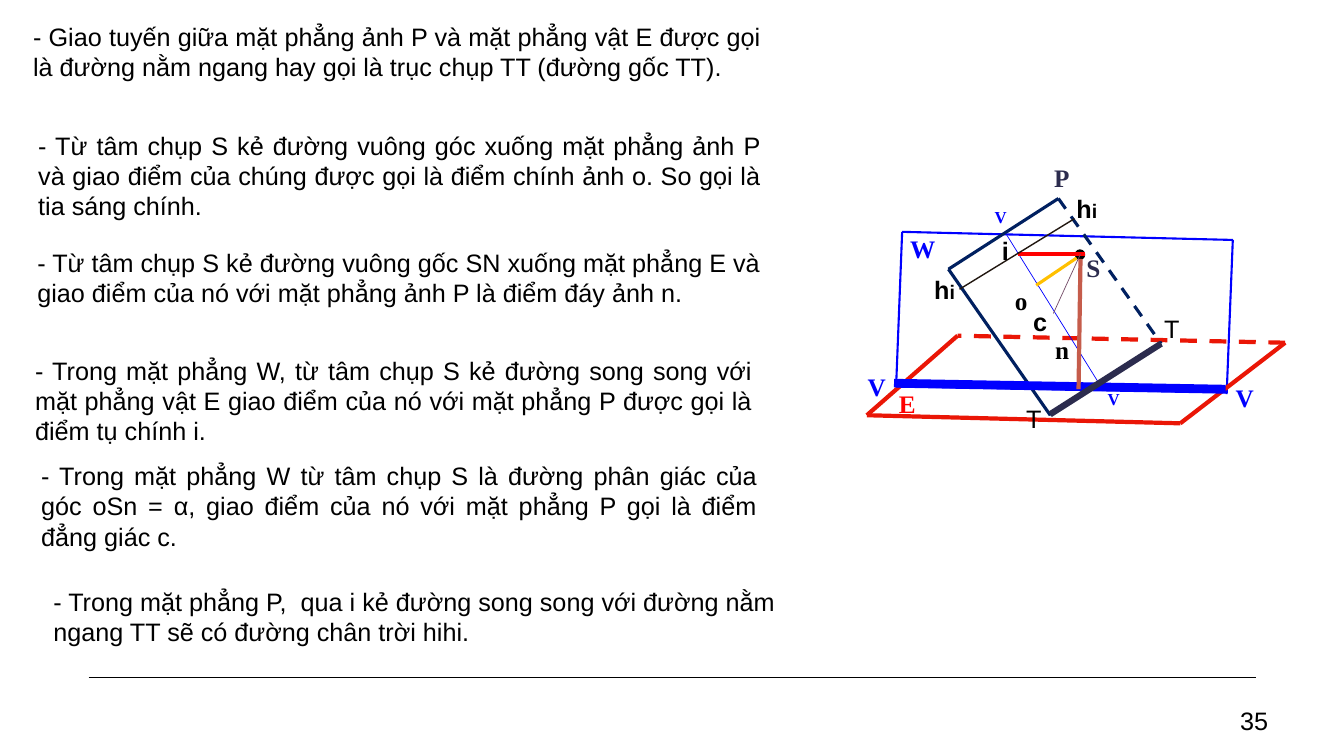
from lxml.etree import SubElement
from pptx import Presentation
from pptx.dml.color import RGBColor
from pptx.enum.dml import MSO_LINE_DASH_STYLE as DASH
from pptx.enum.shapes import MSO_CONNECTOR as CONN, MSO_SHAPE as SHAPE
from pptx.enum.text import MSO_ANCHOR as ANCHOR, PP_ALIGN as ALIGN
from pptx.oxml.ns import qn
from pptx.util import Pt

COLORS = {
    "black": "000000", "blue": "0000FF", "red": "FF0000", "ground": "EA1606",
    "navy": "002060", "slate": "2C2C4E", "gold": "FFC000", "brick": "C55C4B",
    "plum": "734B67", "brown": "211710",
}
SANS, SERIF = "Arial", "Times New Roman"

NOTES = [
    (0, 0, 534, 51, "- Giao tuyến giữa mặt phẳng ảnh P và mặt phẳng vật E được gọi là đường nằm ngang hay gọi là trục chụp TT (đường gốc TT)."),
    (3.6, 78, 530, 73, "- Từ tâm chụp S kẻ đường vuông góc xuống mặt phẳng ảnh P và giao điểm của chúng được gọi là điểm chính ảnh o. So gọi là tia sáng chính."),
    (3, 161.5, 530.6, 51, "- Từ tâm chụp S kẻ đường vuông gốc SN xuống mặt phẳng E và giao điểm của nó với mặt phẳng ảnh P là điểm đáy ảnh n."),
    (1.4, 238.5, 526.3, 73, "- Trong mặt phẳng W, từ tâm chụp S kẻ đường song song với mặt phẳng vật E giao điểm của nó với mặt phẳng P được gọi là điểm tụ chính i."),
    (5.7, 314, 525.6, 73, "- Trong mặt phẳng W từ tâm chụp S là đường phân giác của góc oSn = α, giao điểm của nó với mặt phẳng P gọi là điểm đẳng giác c."),
    (14.4, 404, 581.8, 51, "- Trong mặt phẳng P,  qua i kẻ đường song song với đường nằm ngang TT sẽ có đường chân trời hihi."),
]

PLANE_W = [(28.1, 163.8), (32.4, 53.6), (268.6, 59.4), (264.2, 169.5)]
PLANE_E = [(72, 127.8), (7.2, 184.6), (231.1, 190.4), (306, 132.8)]
PLANE_P = [(217.4, 133.5), (138.2, 184.6), (65.5, 80.3), (144, 29.8)]
RAYS = [
    ((28.1, 163.8), (264.2, 168.1), "blue", 2.25),
    ((106.6, 55), (174.2, 163.8), "blue", 0.5),
    ((26.6, 161.6), (263.5, 165.9), "blue", 6),
    ((138.2, 183.9), (217.4, 133.5), "slate", 4.5),
    ((157, 72.3), (128.2, 91.8), "gold", 2.25),
    ((159.8, 73), (158.4, 165.9), "brick", 3),
    ((115.2, 69.4), (162.7, 69.4), "red", 2.25),
    ((159.8, 69.4), (140.4, 111.9), "plum", 0.5),
    ((73.4, 94.6), (155.5, 44.2), "brown", 1),
]
LABELS = [
    ("W", 31, 51.4, 32.4, SERIF, "blue", 18, True),
    ("V", 91.4, 32, 23, SERIF, "blue", 12, True),
    ("V", 172.1, 162.3, 23, SERIF, "blue", 12, True),
    ("S", 157, 64.4, 24.5, SERIF, "slate", 18, True),
    ("E", 23, 161.6, 27, SERIF, "red", 18, True),
    ("P", 133.9, 0.3, 26.6, SERIF, "slate", 18, True),
    ("V", 263.5, 157.3, 31, SERIF, "blue", 18, True),
    ("V", 0.7, 149.4, 31, SERIF, "blue", 18, True),
    ("T", 212.4, 108.3, 26.6, SANS, "black", 18, False),
    ("T", 113.8, 172.4, 26.6, SANS, "black", 18, False),
    ("o", 105.8, 88.2, 23.8, SERIF, "black", 18, True),
    ("n", 134.6, 123.4, 24.5, SERIF, "black", 18, True),
    ("i", 96.5, 52.9, 18, SANS, "black", 18, True),
    ("c", 118.8, 103.3, 18, SANS, "black", 18, True),
]
HORIZON_LABELS = [(48.2, 80.2), (149.8, 22.6)]


def rgb(name):
    """Return the named colour."""
    return RGBColor.from_string(COLORS[name])


def add_line(s, start, end, color, width, dashed=False):
    """Draw a straight line between two points."""
    ln = s.shapes.add_connector(CONN.STRAIGHT, *map(Pt, (*start, *end)))
    ln.line.color.rgb = rgb(color)
    ln.line.width = Pt(width)
    if dashed:
        ln.line.dash_style = DASH.DASH
    SubElement(ln._element.spPr, qn("a:effectLst"))


def add_text(s, x, y, w, h, text, font=SANS, color="black", size=18,
             bold=False, align=ALIGN.LEFT):
    """Add a one-paragraph text box and return its shape."""
    sp = s.shapes.add_textbox(Pt(x), Pt(y), Pt(w), Pt(h))
    tf = sp.text_frame
    tf.word_wrap = True
    p = tf.paragraphs[0]
    p.text = text
    p.alignment = align
    p.font.name, p.font.size, p.font.bold = font, Pt(size), bold
    p.font.color.rgb = rgb(color)
    return sp


def add_notes(s, left, top):
    """Place the column of definitions."""
    for i, (x, y, w, h, text) in enumerate(NOTES):
        align = ALIGN.LEFT if i == len(NOTES) - 1 else ALIGN.JUSTIFY
        add_text(s, left + x, top + y, w, h, text, align=align)


def add_diagram(s, left, top):
    """Draw the three planes, the rays from S and their labels."""
    def at(point):
        """Shift a diagram point onto the slide."""
        return left + point[0], top + point[1]

    planes = [(PLANE_W, "blue", 1.5), (PLANE_E, "ground", 3), (PLANE_P, "navy", 2.25)]
    for corners, color, width in planes:
        for start, end in zip(corners, corners[1:]):
            add_line(s, at(start), at(end), color, width)
        if corners is not PLANE_W:
            add_line(s, at(corners[-1]), at(corners[0]), color, width, dashed=True)

    x, y = at((156.2, 66.6))
    center = s.shapes.add_shape(SHAPE.OVAL, Pt(x), Pt(y), Pt(6.5), Pt(6.5))
    center.shadow.inherit = False
    center.fill.solid()
    center.fill.fore_color.rgb = center.line.color.rgb = rgb("black")
    center.line.width = Pt(1)

    for start, end, color, width in RAYS:
        add_line(s, at(start), at(end), color, width)
    for text, x, y, w, font, color, size, bold in LABELS:
        add_text(s, *at((x, y)), w, size * 1.6, text, font, color, size, bold)
    for point in HORIZON_LABELS:
        sp = add_text(s, *at(point), 35.3, 28.8, "h", bold=True)
        r = sp.text_frame.paragraphs[0].add_run()
        r.text = "i"
        r.font.size = Pt(14)


def add_footer(s, left, top, width):
    """Draw the rule and the page number under it."""
    add_line(s, (left, top), (left + width, top), "black", 1)
    sp = add_text(s, left + width - 37.4, top + 16.6, 53.3, 28.8, "35", align=ALIGN.RIGHT)
    sp.text_frame.vertical_anchor = ANCHOR.MIDDLE


def main():
    """Build the slide and save it."""
    prs = Presentation()
    prs.slide_width, prs.slide_height = Pt(960), Pt(540)
    s = prs.slides.add_slide(prs.slide_layouts[6])
    add_footer(s, 63.4, 483.8, 833.7)
    add_diagram(s, 612, 112)
    add_notes(s, 16.6, 11.4)
    prs.save("out.pptx")


if __name__ == "__main__":
    main()
